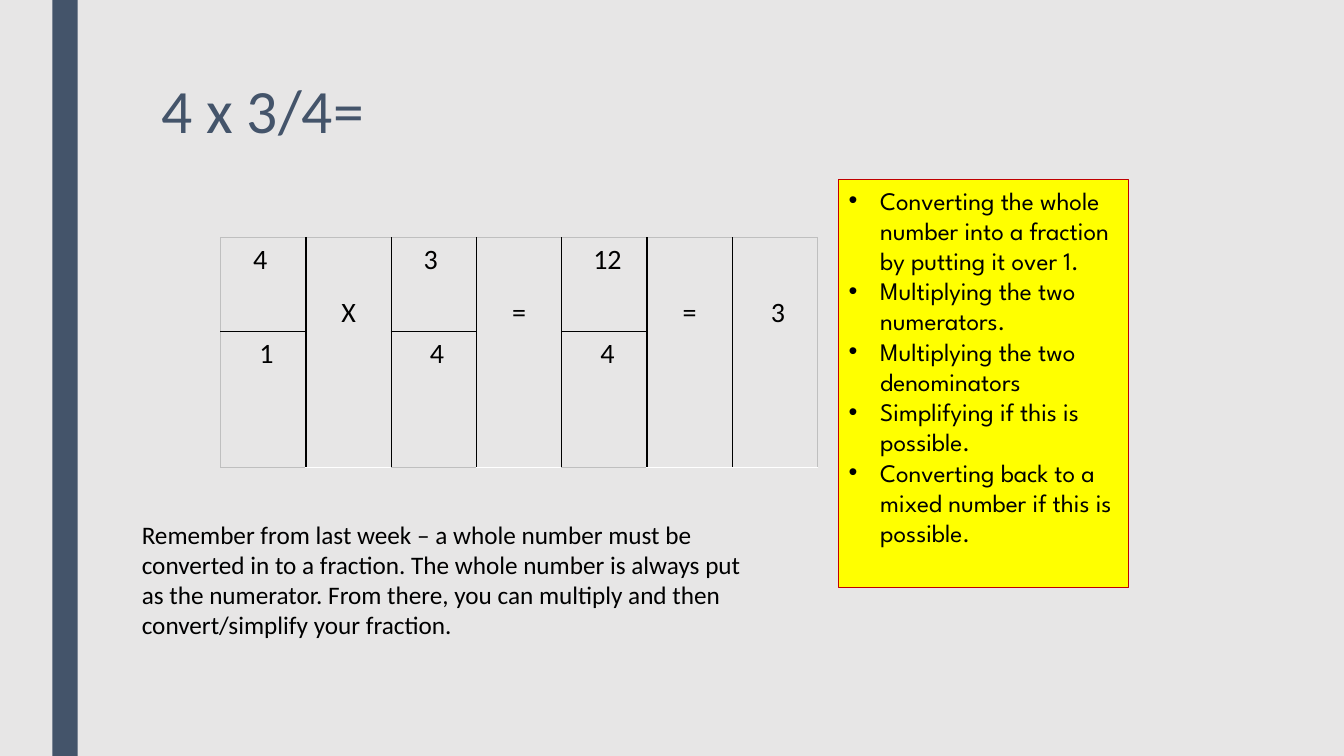
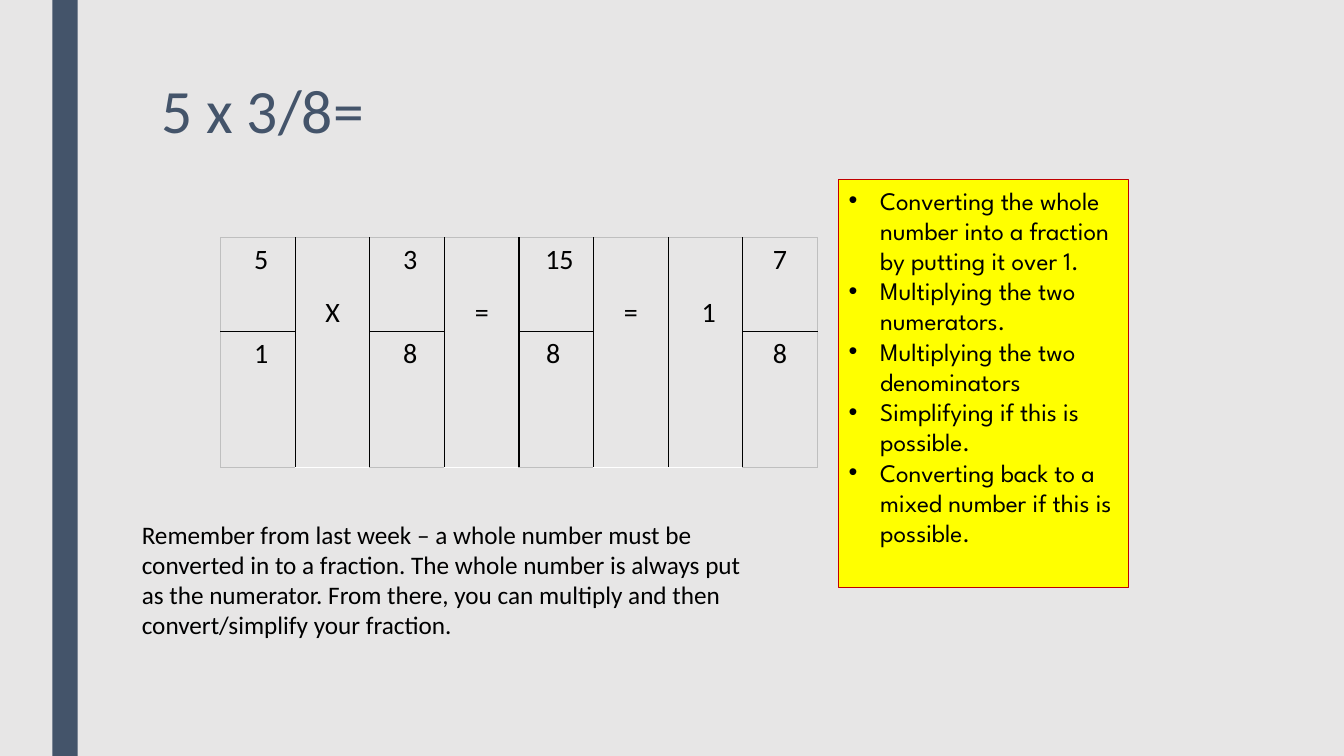
import lxml.etree
import pptx
import pptx.dml.color
import pptx.enum.shapes
import pptx.enum.text
import pptx.oxml.ns
import pptx.util

Pt = pptx.util.Pt
RGB = pptx.dml.color.RGBColor.from_string
qn = pptx.oxml.ns.qn
ALIGN = pptx.enum.text.PP_ALIGN
ANCHOR = pptx.enum.text.MSO_ANCHOR
AUTOFIT = pptx.enum.text.MSO_AUTO_SIZE

# The slide is a grid of 160 columns by 90 rows
COLS, ROWS = 160, 90


class Theme:
    page, band, ink = "E7E6E6", "44546A", "000000"
    note, note_line, grid_edge = "FFFF00", "C00000", "BFBFBF"
    title = {"name": "Calibri", "size": Pt(44), "color": band}
    sums = {"name": "Calibri", "size": Pt(20), "color": ink}
    text = {"name": "Calibri", "size": Pt(18), "color": ink}
    steps = {"name": "League Spartan", "size": Pt(18), "color": ink}
    frame = {"word_wrap": True, "auto_size": AUTOFIT.NONE,
             "vertical_anchor": ANCHOR.TOP}


STEPS = [
    "Converting the whole number into a fraction by putting it over 1.",
    "Multiplying the two numerators.",
    "Multiplying the two denominators",
    "Simplifying if this is possible.",
    "Converting back to a mixed number if this is possible.",
]
REMINDER = ("Remember from last week – a whole number must be converted in to "
            "a fraction. The whole number is always put as the numerator. From "
            "there, you can multiply and then convert/simplify your fraction.")

# Each column holds a fraction (two cells) or one tall cell: text, sideways nudge
TIMES, EQUALS = [("X", 0)], [("=", 0)]
SUMS = [
    ("4 x 3/4=", [[("4", -1), ("1", 1)], TIMES, [("3", -1), ("4", 1)], EQUALS,
                  [("12", 1), ("4", 1)], EQUALS, [("3", 1)]]),
    ("5 x 3/8=", [[("5", 1), ("1", 1)], TIMES, [("3", 1), ("8", 1)], EQUALS,
                  [("15", 1), ("8", -1)], EQUALS, [("1", 1)],
                  [("7", 0), ("8", 0)]]),
]


def units(n):
    return pptx.util.Inches(n / 12)


def apply(obj, formats):
    for name, value in formats.items():
        setattr(obj, name, value)


def place(shape, *box):
    apply(shape, dict(zip(("left", "top", "width", "height"), map(units, box))))


def write(p, text, font, **formats):
    r = p.add_run()
    r.text = text
    apply(r.font, {k: v for k, v in font.items() if k != "color"})
    r.font.color.rgb = RGB(font["color"])
    apply(p, formats)


def fill(shape, color):
    shape.fill.solid()
    shape.fill.fore_color.rgb = RGB(color)


def add_bullet(p, indent):
    pPr = p._p.get_or_add_pPr()
    pPr.set("marL", str(indent))
    pPr.set("indent", str(-indent))
    lxml.etree.SubElement(pPr, qn("a:buFont")).set("typeface", "Arial")
    lxml.etree.SubElement(pPr, qn("a:buChar")).set("char", "•")


def add_border(cell, side, color):
    ln = lxml.etree.SubElement(cell._tc.get_or_add_tcPr(), qn("a:ln" + side))
    ln.set("w", str(Pt(1)))
    solid = lxml.etree.SubElement(ln, qn("a:solidFill"))
    lxml.etree.SubElement(solid, qn("a:srgbClr")).set("val", color)


def add_master_band(prs, s):
    """Build the side band and move it behind everything on the master."""
    band = s.shapes.add_shape(pptx.enum.shapes.MSO_SHAPE.RECTANGLE, 0, 0, 0, 0)
    place(band, 6.24, 0, 3, ROWS)
    fill(band, Theme.band)
    band.line.fill.background()
    band.shadow.inherit = False
    prs.slide_master.shapes.element.insert(2, band.element)


def add_title(s, text):
    sp = s.shapes.title
    place(sp, 18, 9, 126, 19.5)
    apply(sp.text_frame, Theme.frame)
    write(sp.text_frame.paragraphs[0], text, Theme.title,
          alignment=ALIGN.LEFT, line_spacing=0.89)


def add_steps(s):
    sp = s.placeholders[1]
    place(sp, 99.84, 21.4, 34.56, 48.5)
    fill(sp, Theme.note)
    sp.line.color.rgb = RGB(Theme.note_line)
    sp.line.width = Pt(0.75)
    tf = sp.text_frame
    apply(tf, Theme.frame)
    for i, step in enumerate(STEPS):
        p = tf.add_paragraph() if i else tf.paragraphs[0]
        write(p, step, Theme.steps, alignment=ALIGN.LEFT, line_spacing=1.0,
              space_before=Pt(0), space_after=Pt(0))
        add_bullet(p, units(3.75))


def format_cell(cell, text, nudge, tall):
    apply(cell, {"margin_left": units(0.84 + 0.75 * (nudge > 0)),
                 "margin_right": units(0.84 + 0.75 * (nudge < 0)),
                 "margin_top": units(6.33 if tall else 0),
                 "margin_bottom": 0, "vertical_anchor": ANCHOR.TOP})
    write(cell.text_frame.paragraphs[0], text, Theme.sums,
          alignment=ALIGN.CENTER, line_spacing=1.15, space_after=Pt(10))


def add_sum(s, columns):
    n = len(columns)
    table = s.shapes.add_table(2, n, *map(units, (26.28, 28.3, 71.04, 27.36))).table
    apply(table, {"first_row": False, "horz_banding": False})
    for row, height in zip(table.rows, (11.16, 16.2)):
        row.height = units(height)
    for c, entries in enumerate(columns):
        table.columns[c].width = units(71.04 / n)
        tall = len(entries) == 1
        for r in range(2):
            cell = table.cell(r, c)
            outer = {"L": c == 0, "R": c == n - 1, "T": r == 0, "B": r == 1}
            for side, at_edge in outer.items():
                if at_edge or side in "LR" or not tall:
                    add_border(cell, side, Theme.grid_edge if at_edge else Theme.ink)
            cell.fill.background()
        if tall:
            table.cell(0, c).merge(table.cell(1, c))
        for r, (text, nudge) in enumerate(entries):
            format_cell(table.cell(r, c), text, nudge, tall)


def add_reminder(s):
    tf = s.shapes.add_textbox(*map(units, (15.7, 61.2, 76.9, 15.7))).text_frame
    apply(tf, Theme.frame)
    write(tf.paragraphs[0], REMINDER, Theme.text)


def main():
    prs = pptx.Presentation()
    apply(prs, {"slide_width": units(COLS), "slide_height": units(ROWS)})
    fill(prs.slide_master.background, Theme.page)
    for i, (title, columns) in enumerate(SUMS):
        s = prs.slides.add_slide(prs.slide_layouts[1])
        if i == 0:
            add_master_band(prs, s)
        add_title(s, title)
        add_steps(s)
        add_sum(s, columns)
        add_reminder(s)
    prs.save("out.pptx")


if __name__ == "__main__":
    main()
